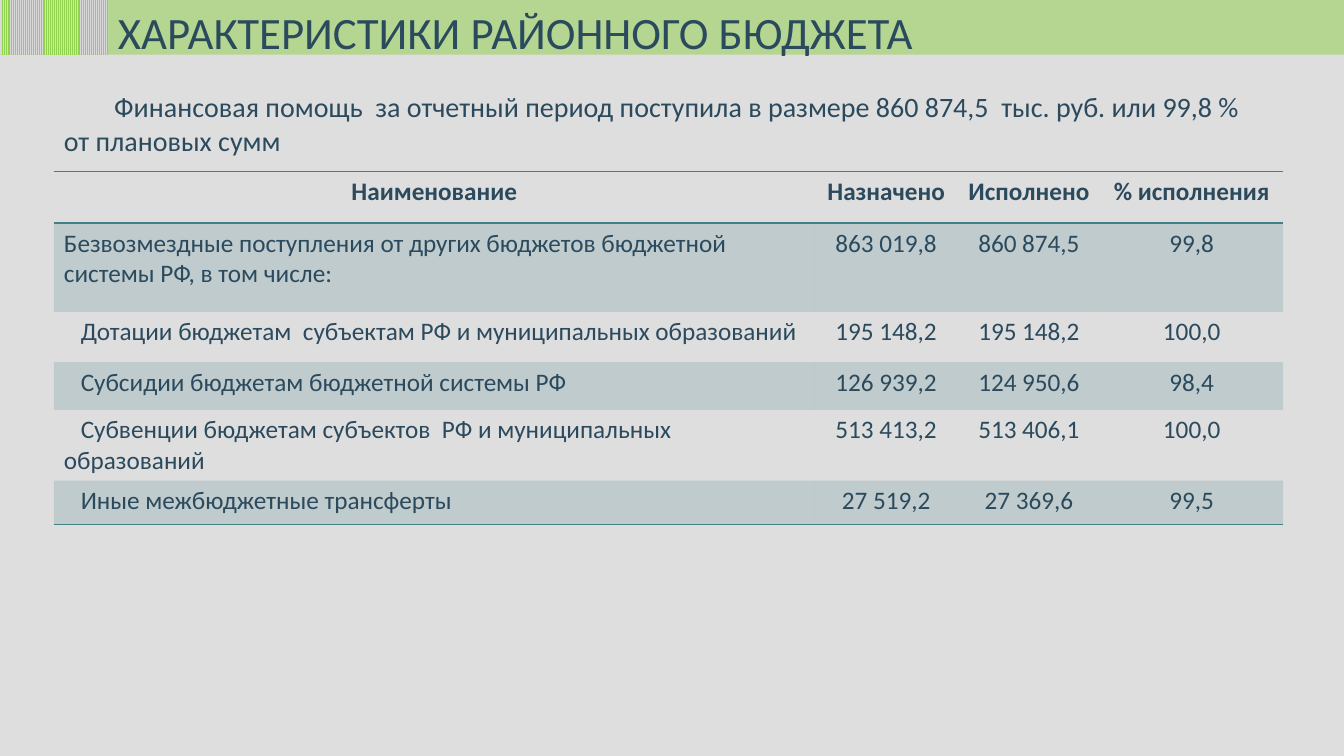
"""Build the slide on the characteristics of the district budget."""
from lxml import etree
from pptx import Presentation
from pptx.dml.color import RGBColor
from pptx.enum.dml import MSO_PATTERN
from pptx.enum.shapes import MSO_SHAPE
from pptx.enum.text import MSO_ANCHOR, MSO_AUTO_SIZE, PP_ALIGN
from pptx.oxml.ns import qn
from pptx.util import Pt

RECTANGLE = MSO_SHAPE.RECTANGLE
LIGHT_VERTICAL = MSO_PATTERN.LIGHT_VERTICAL
TOP = MSO_ANCHOR.TOP
GROW = MSO_AUTO_SIZE.SHAPE_TO_FIT_TEXT
LEFT, CENTER = PP_ALIGN.LEFT, PP_ALIGN.CENTER

PAGE_GREY = RGBColor(0xDE, 0xDE, 0xDE)
GREEN = RGBColor(0x92, 0xD0, 0x50)
STRIPE_GREY = RGBColor(0xD9, 0xD9, 0xD9)
INK = RGBColor(0x2B, 0x4A, 0x5E)
TEAL = RGBColor(0x43, 0x80, 0x86)

FONT = "Calibri"
PLAIN_TABLE_STYLE = "{2D5ABB26-0587-4C30-8999-92F81FD0307C}"
BAND_HEIGHT = 39
STRIPES_WIDTH = 77
COLUMN_WIDTHS = [543.5, 102, 102, 130.5]
ROW_HEIGHTS = [37, 63.5, 36, 34, 50.5, 31.5]
ROWS = [
    ("Наименование", "Назначено", "Исполнено", "% исполнения"),
    ("Безвозмездные поступления от других бюджетов бюджетной системы РФ, в том числе:",
     "863 019,8", "860 874,5", "99,8"),
    ("Дотации бюджетам  субъектам РФ и муниципальных образований",
     "195 148,2", "195 148,2", "100,0"),
    ("Субсидии бюджетам бюджетной системы РФ", "126 939,2", "124 950,6", "98,4"),
    ("Субвенции бюджетам субъектов  РФ и муниципальных образований",
     "513 413,2", "513 406,1", "100,0"),
    ("Иные межбюджетные трансферты", "27 519,2", "27 369,6", "99,5"),
]


def write(para, text, size, align=LEFT, bold=False, indent=0):
    para.text = text
    para.alignment = align
    para.font.name = FONT
    para.font.size = Pt(size)
    para.font.bold = bold
    para.font.color.rgb = INK
    if indent:
        properties = para._p.get_or_add_pPr()
        properties.set("marL", "0")
        properties.set("indent", str(Pt(indent)))


def fade(properties, percent):
    color = properties.find(qn("a:solidFill")).find(qn("a:srgbClr"))
    etree.SubElement(color, qn("a:alpha")).set("val", str(percent * 1000))


deck = Presentation()
deck.slide_width = Pt(960)
deck.slide_height = Pt(540)
page = deck.slides.add_slide(deck.slide_layouts[5])
page.background.fill.solid()
page.background.fill.fore_color.rgb = PAGE_GREY

band = page.shapes.add_shape(RECTANGLE, 0, 0, deck.slide_width, Pt(BAND_HEIGHT))
band.fill.solid()
band.fill.fore_color.rgb = GREEN
fade(band.element.spPr, 54)

stripes = page.shapes.add_shape(RECTANGLE, 0, 0, Pt(STRIPES_WIDTH), Pt(BAND_HEIGHT))
stripes.fill.patterned()
stripes.fill.pattern = LIGHT_VERTICAL
stripes.fill.fore_color.rgb = GREEN
stripes.fill.back_color.rgb = STRIPE_GREY

for shape in (band, stripes):
    shape.line.fill.background()
    shape.shadow.inherit = False

title = page.shapes.title
stripes.element.addprevious(title.element)
title.left, title.top, title.width, title.height = Pt(STRIPES_WIDTH), 0, Pt(596), Pt(46)
title.text_frame.word_wrap = False
title.text_frame.auto_size = GROW
title.text_frame.vertical_anchor = TOP
write(title.text_frame.paragraphs[0], "ХАРАКТЕРИСТИКИ РАЙОННОГО БЮДЖЕТА", 32)

summary = page.shapes.add_textbox(Pt(38.5), Pt(60.5), Pt(876), Pt(55.5))
summary.text_frame.word_wrap = True
summary.text_frame.auto_size = GROW
write(summary.text_frame.paragraphs[0],
      "Финансовая помощь  за отчетный период поступила в размере 860 874,5  тыс. руб. "
      "или 99,8 % от плановых сумм", 20, indent=36)

frame = page.shapes.add_table(len(ROWS), len(COLUMN_WIDTHS), Pt(38.5), Pt(122.25),
                              Pt(sum(COLUMN_WIDTHS)), Pt(sum(ROW_HEIGHTS)))
table = frame.table
next(frame.element.iter(qn("a:tableStyleId"))).text = PLAIN_TABLE_STYLE
for column, width in zip(table.columns, COLUMN_WIDTHS):
    column.width = Pt(width)
for row, height in zip(table.rows, ROW_HEIGHTS):
    row.height = Pt(height)

last_row = len(ROWS) - 1
ruled_sides = {0: ("a:lnT", "a:lnB"), last_row: ("a:lnB",)}
for row_index, values in enumerate(ROWS):
    for column_index, value in enumerate(values):
        cell = table.cell(row_index, column_index)
        is_header = row_index == 0
        is_name = column_index == 0
        write(cell.text_frame.paragraphs[0], value, 18,
              align=LEFT if is_name and not is_header else CENTER,
              bold=is_header, indent=12 if is_name and row_index > 1 else 0)
        properties = cell._tc.get_or_add_tcPr()
        for side in ruled_sides.get(row_index, ()):
            rule = etree.SubElement(properties, qn(side), w=str(Pt(1)))
            paint = etree.SubElement(rule, qn("a:solidFill"))
            etree.SubElement(paint, qn("a:srgbClr"), val=str(TEAL))
        if row_index % 2:
            cell.fill.solid()
            cell.fill.fore_color.rgb = TEAL
            fade(properties, 20)
        else:
            cell.fill.background()

deck.save("out.pptx")
